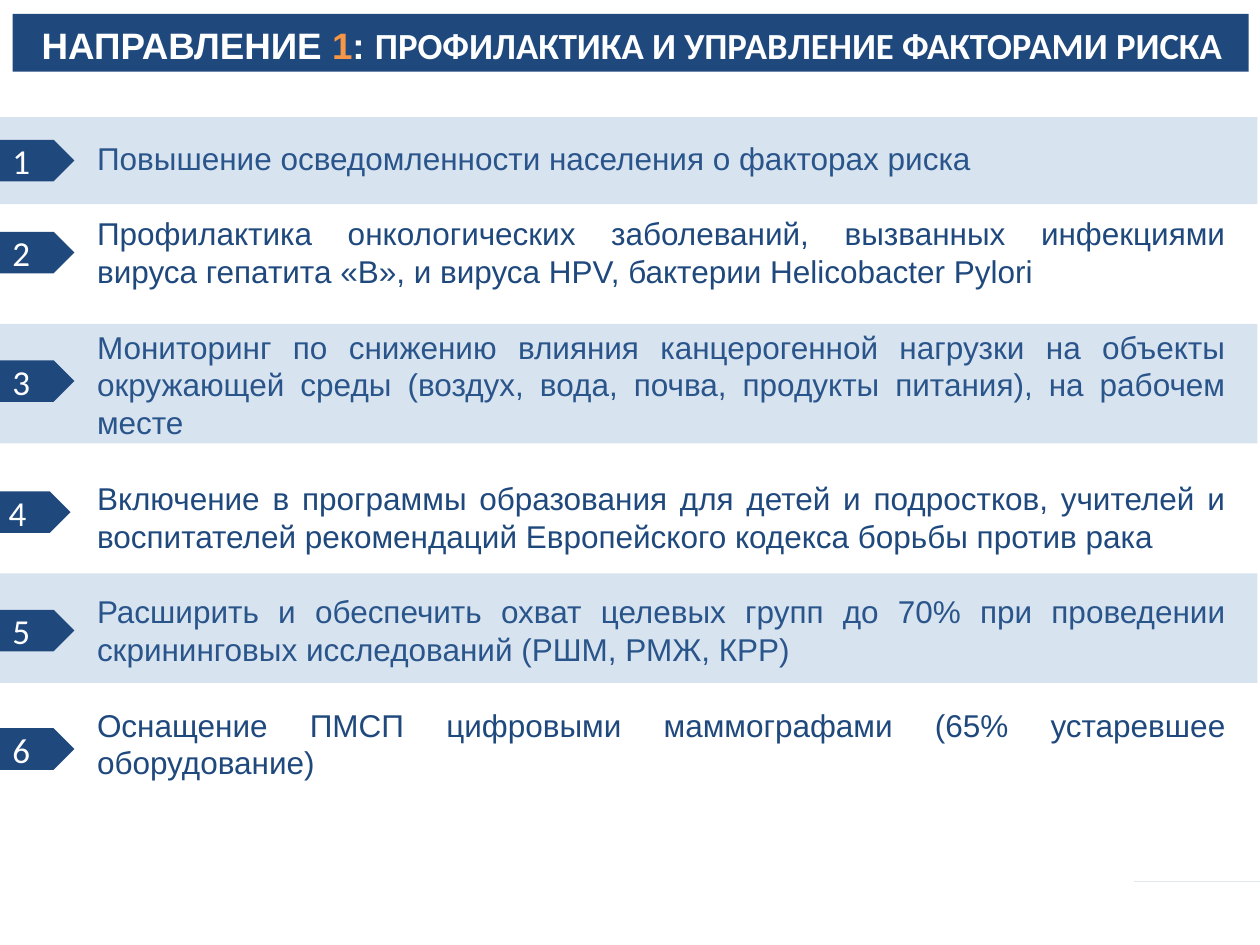
from dataclasses import dataclass

from lxml import etree
from pptx import Presentation
from pptx.dml.color import RGBColor
from pptx.enum.shapes import MSO_SHAPE
from pptx.enum.text import MSO_ANCHOR, MSO_AUTO_SIZE, PP_ALIGN
from pptx.oxml.ns import qn
from pptx.util import Inches, Pt

RECTANGLE = MSO_SHAPE.RECTANGLE
PENTAGON = MSO_SHAPE.PENTAGON
TOP, MIDDLE = MSO_ANCHOR.TOP, MSO_ANCHOR.MIDDLE
LEFT, RIGHT, JUSTIFY = PP_ALIGN.LEFT, PP_ALIGN.RIGHT, PP_ALIGN.JUSTIFY
NO_AUTOFIT = MSO_AUTO_SIZE.NONE
NAVY, BLUE, ORANGE, WHITE = "1F497D", "4F81BD", "F79646", "FFFFFF"
BAND_ALPHA = 22
LINE_HEIGHT = 21.6
CURVE_STEPS = 16


@dataclass
class Measure:
    text: str
    marker_top: float
    marker_left: float = 0


@dataclass
class Band:
    top: float
    height: float


MEASURES = [
    Measure("Повышение осведомленности населения о факторах риска", 1.11),
    Measure("Профилактика онкологических заболеваний, вызванных инфекциями вируса "
            "гепатита «В», и вируса HPV, бактерии Helicobacter Pylori", 1.84),
    Measure("Мониторинг по снижению влияния канцерогенной нагрузки на объекты окружающей "
            "среды (воздух, вода, почва, продукты питания), на рабочем месте", 2.86),
    Measure("Включение в программы образования для детей и подростков, учителей и "
            "воспитателей рекомендаций Европейского кодекса борьбы против рака", 3.9, -0.03),
    Measure("Расширить и обеспечить охват целевых групп до 70% при проведении "
            "скрининговых исследований (РШМ, РМЖ, КРР)", 4.84),
    Measure("Оснащение ПМСП цифровыми маммографами (65% устаревшее оборудование)", 5.78),
]
BANDS = [Band(0.93, 0.69), Band(2.57, 0.95), Band(4.55, 0.87)]
TITLE_PARTS = [
    ("НАПРАВЛЕНИЕ ", "Arial", WHITE),
    ("1", "Arial", ORANGE),
    (": ", "Arial", WHITE),
    ("ПРОФИЛАКТИКА И УПРАВЛЕНИЕ ФАКТОРАМИ РИСКА", "Calibri", WHITE),
]
CORNER_START = (8.99, 7.49)
CORNER_CURVES = [
    ((9, 7.35), (9.81, 6.72), (9.99, 6.64)),
    ((10.01, 6.64), (10, 6.69), (10.01, 6.83)),
    ((10.01, 6.97), (10, 7.26), (10, 7.49)),
    ((9.25, 7.49), (8.99, 7.51), (8.99, 7.49)),
]


def rgb(color: str) -> RGBColor:
    return RGBColor.from_string(color)


def paint(shape, color: str) -> None:
    shape.shadow.inherit = False
    shape.fill.solid()
    shape.fill.fore_color.rgb = rgb(color)
    shape.line.fill.background()


def style_font(font, name: str, size: float, color: str) -> None:
    font.name = name
    font.size = Pt(size)
    font.color.rgb = rgb(color)


def place(shape, left: float, top: float, width: float, height: float) -> None:
    shape.left, shape.top = Inches(left), Inches(top)
    shape.width, shape.height = Inches(width), Inches(height)


def add_block(slide, kind, left: float, top: float, width: float, height: float, color: str):
    shape = slide.shapes.add_shape(
        kind, Inches(left), Inches(top), Inches(width), Inches(height))
    paint(shape, color)
    return shape


def fill_title(slide) -> None:
    title = slide.shapes.title
    place(title, 0.26, 0.14, 9.71, 0.43)
    frame = title.text_frame
    frame.auto_size, frame.word_wrap = NO_AUTOFIT, True
    frame.vertical_anchor = TOP
    frame.margin_left = frame.margin_right = Inches(0.07)
    frame.margin_top = frame.margin_bottom = Inches(0.04)
    paragraph = frame.paragraphs[0]
    paragraph.alignment = LEFT
    for text, font_name, color in TITLE_PARTS:
        run = paragraph.add_run()
        run.text = text
        style_font(run.font, font_name, 21, color)
        run.font.bold = True
    bar = add_block(slide, RECTANGLE, 0.1, 0.11, 9.81, 0.46, NAVY)
    title.element.addprevious(bar.element)


def fill_body(slide) -> None:
    body = slide.placeholders[1]
    place(body, 0.67, 1.05, 9.16, 5.55)
    frame = body.text_frame
    frame.text = "\n".join(measure.text for measure in MEASURES)
    frame.auto_size, frame.word_wrap = NO_AUTOFIT, True
    frame.vertical_anchor = TOP
    for index, paragraph in enumerate(frame.paragraphs):
        paragraph.alignment = JUSTIFY
        paragraph.line_spacing = Pt(LINE_HEIGHT)
        paragraph.space_before = Pt(LINE_HEIGHT if index else 0)
        properties = paragraph._p.get_or_add_pPr()
        properties.set("marL", "0")
        properties.set("indent", "0")
        etree.SubElement(properties, qn("a:buNone"))
        style_font(paragraph.runs[0].font, "Arial", 18, NAVY)


def add_band(slide, band: Band) -> None:
    shape = add_block(slide, RECTANGLE, 0, band.top, 9.98, band.height, BLUE)
    color = shape.element.spPr.find(qn("a:solidFill")).find(qn("a:srgbClr"))
    etree.SubElement(color, qn("a:alpha")).set("val", str(BAND_ALPHA * 1000))


def add_marker(slide, number: int, measure: Measure) -> None:
    shape = add_block(
        slide, PENTAGON, measure.marker_left, measure.marker_top, 0.59, 0.33, NAVY)
    frame = shape.text_frame
    frame.text = str(number)
    frame.vertical_anchor = MIDDLE
    paragraph = frame.paragraphs[0]
    paragraph.alignment = LEFT
    style_font(paragraph.runs[0].font, "Calibri", 20, WHITE)


def curve_points(start, first, second, end) -> list[tuple[float, float]]:
    points = []
    for step in range(1, CURVE_STEPS + 1):
        t = step / CURVE_STEPS
        weights = ((1 - t) ** 3, 3 * t * (1 - t) ** 2, 3 * t ** 2 * (1 - t), t ** 3)
        corners = (start, first, second, end)
        x, y = (sum(weight * corner[axis] for weight, corner in zip(weights, corners))
                for axis in (0, 1))
        points.append((x, y))
    return points


def add_page_corner(slide, number: int) -> None:
    points, start = [], CORNER_START
    for curve in CORNER_CURVES:
        points += curve_points(start, *curve)
        start = curve[-1]
    builder = slide.shapes.build_freeform(*CORNER_START, scale=Inches(1))
    builder.add_line_segments(points, close=True)
    paint(builder.convert_to_shape(), NAVY)
    box = slide.shapes.add_textbox(Inches(9.4), Inches(7.02), Inches(0.56), Inches(0.42))
    frame = box.text_frame
    frame.text = str(number)
    frame.word_wrap = True
    frame.vertical_anchor = MIDDLE
    paragraph = frame.paragraphs[0]
    paragraph.alignment = RIGHT
    style_font(paragraph.runs[0].font, "Calibri", 32, WHITE)


def main() -> None:
    """Build the slide on risk factor prevention and save it."""
    presentation = Presentation()
    presentation.slide_width, presentation.slide_height = Inches(10), Inches(7.5)
    slide = presentation.slides.add_slide(presentation.slide_layouts[1])
    fill_title(slide)
    fill_body(slide)
    for band in BANDS:
        add_band(slide, band)
    for number, measure in enumerate(MEASURES, start=1):
        add_marker(slide, number, measure)
    add_page_corner(slide, 9)
    presentation.save("out.pptx")


if __name__ == "__main__":
    main()
